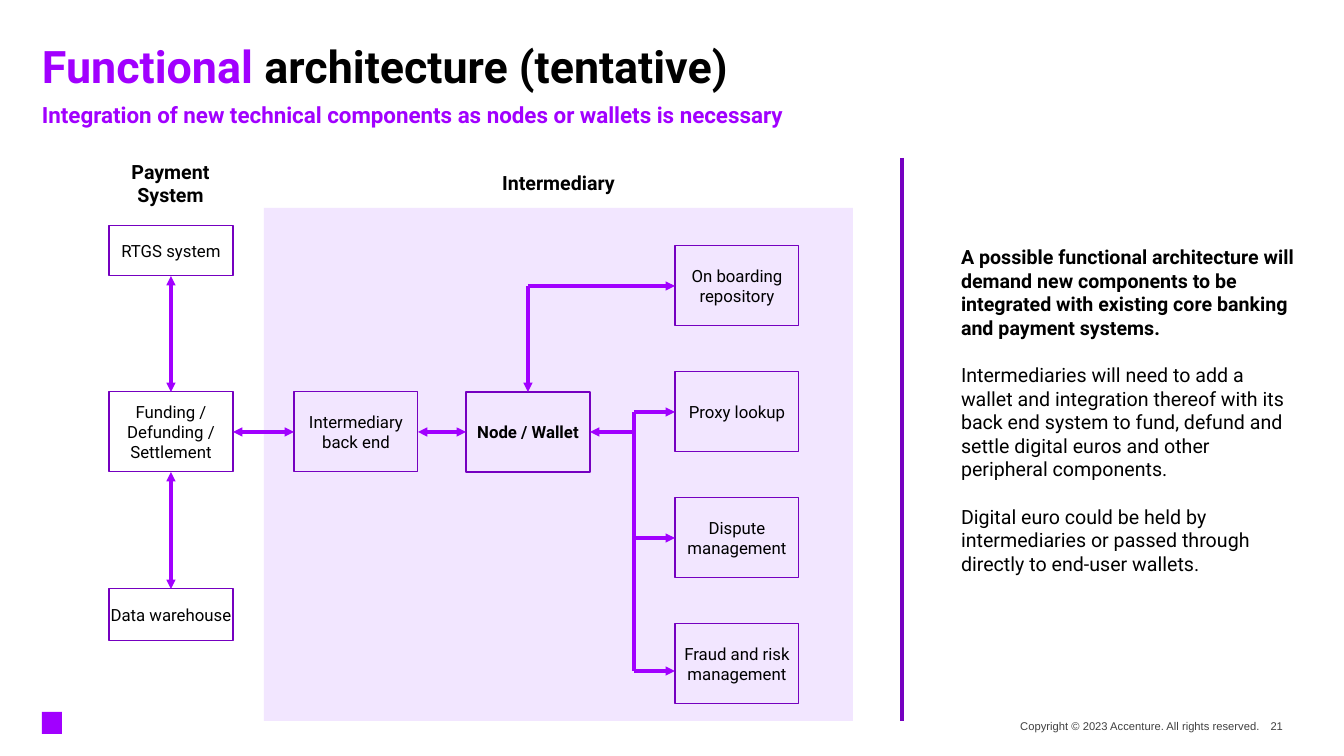
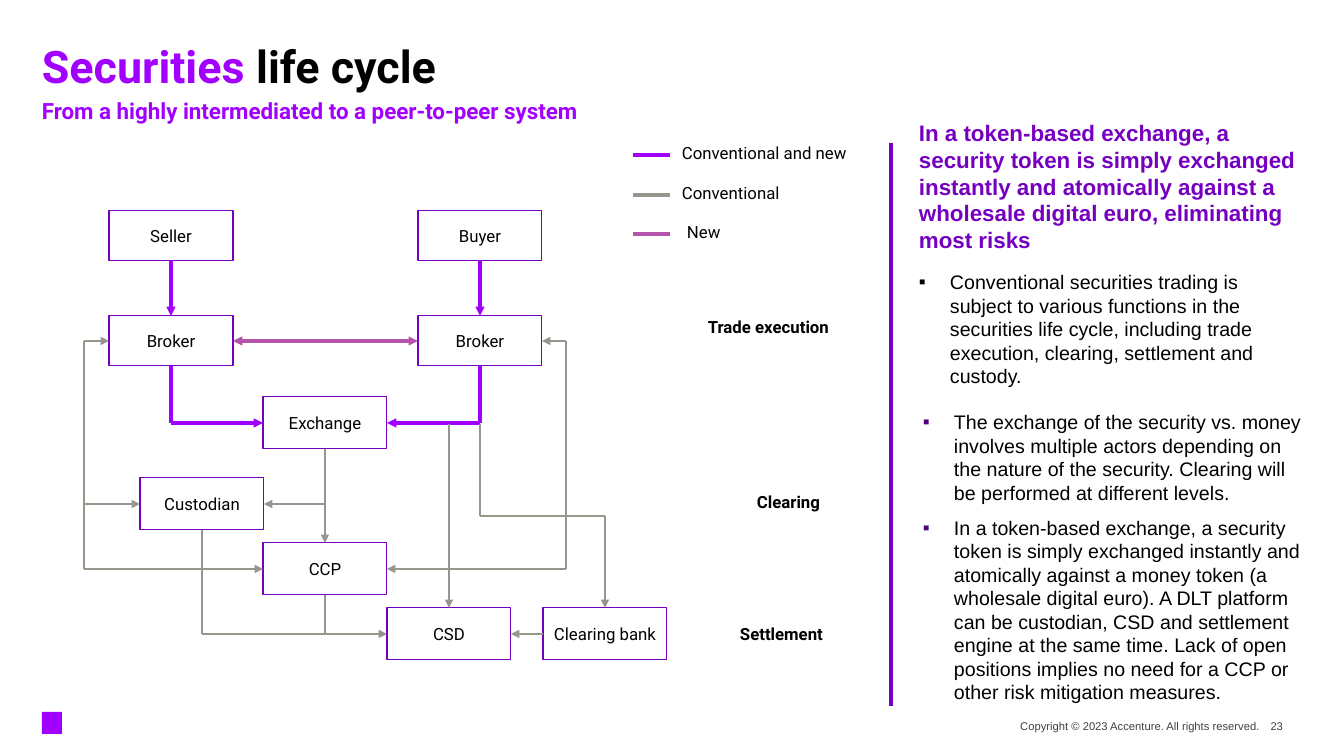
from lxml.etree import SubElement
from pptx import Presentation
from pptx.dml.color import RGBColor
from pptx.enum.shapes import MSO_CONNECTOR, MSO_SHAPE
from pptx.enum.text import MSO_ANCHOR, PP_ALIGN
from pptx.oxml.ns import qn
from pptx.util import Emu, Pt

PX = 914400 / 100.8
VIOLET = RGBColor(0xA1, 0x00, 0xFF)
DEEP_VIOLET = RGBColor(0x75, 0x00, 0xC0)
PLUM = RGBColor(0x50, 0x00, 0x80)
MAUVE = RGBColor(0xB4, 0x55, 0xAA)
LAVENDER = RGBColor(0xF2, 0xE6, 0xFF)
STONE = RGBColor(0x96, 0x96, 0x8C)
CHARCOAL = RGBColor(0x40, 0x40, 0x40)
BLACK = RGBColor(0, 0, 0)

TOP, LEFT, BOTTOM, RIGHT = range(4)
BOX_WIDTH = 124

TITLE = {"name": "Roboto", "size": Pt(32), "bold": True, "color": BLACK}
SUBTITLE = {"name": "Roboto", "size": Pt(16), "bold": True, "color": VIOLET}
LABEL = {"name": "Roboto", "size": Pt(12), "bold": False, "color": BLACK}
STRONG_LABEL = {**LABEL, "bold": True}
BODY = {**LABEL, "size": Pt(14)}
HEADING = {**BODY, "bold": True}
TOKEN_BODY = {**BODY, "name": "Arial"}
TOKEN_HEADING = {**SUBTITLE, "name": "Arial", "color": DEEP_VIOLET}
FOOTER = {"name": "Arial", "size": Pt(8), "bold": False, "color": CHARCOAL}

CENTRED = {"alignment": PP_ALIGN.CENTER}
RIGHTWARD = {"alignment": PP_ALIGN.RIGHT}
COPYRIGHT = "Copyright © 2023 Accenture. All rights reserved."

SERVICES = ["On boarding repository", "Proxy lookup",
            "Dispute management", "Fraud and risk management"]
ARCHITECTURE_BOXES = {
    "RTGS system": (109, 226, 50),
    "Funding / Defunding / Settlement": (109, 392, 80),
    "Data warehouse": (109, 589, 52),
    "Intermediary back end": (294, 392, 80),
    "Node / Wallet": (466, 392, 80),
    **{name: (675, 246 + 126 * row, 80) for row, name in enumerate(SERVICES)},
}
FUNDING = "Funding / Defunding / Settlement"
BACK_END = "Intermediary back end"
ARCHITECTURE_ROUTES = [
    ([("RTGS system", BOTTOM), (FUNDING, TOP)], VIOLET, "both"),
    ([(FUNDING, BOTTOM), ("Data warehouse", TOP)], VIOLET, "both"),
    ([(FUNDING, RIGHT), (BACK_END, LEFT)], VIOLET, "both"),
    ([(BACK_END, RIGHT), ("Node / Wallet", LEFT)], VIOLET, "both"),
    ([(634, 412), (634, 671)], VIOLET, "none"),
    ([(634, 432), ("Node / Wallet", RIGHT)], VIOLET, "end"),
    ([(634, 412), ("Proxy lookup", LEFT)], VIOLET, "end"),
    ([(634, 538), ("Dispute management", LEFT)], VIOLET, "end"),
    ([(634, 671), (675, 671)], VIOLET, "end"),
    ([("Node / Wallet", TOP), (528, 286), ("On boarding repository", LEFT)], VIOLET, "both"),
]
ARCHITECTURE_TEXT = [
    ("A possible functional architecture will demand new components to be integrated "
     "with existing core banking and payment systems.", HEADING),
    ("Intermediaries will need to add a wallet and integration thereof with its back end "
     "system to fund, defund and settle digital euros and other peripheral components.", BODY),
    ("Digital euro could be held by intermediaries or passed through directly to "
     "end-user wallets.", BODY),
]

SECURITIES_BOXES = {
    "Seller": (109, 211, 50),
    "Seller broker": (109, 316, 50),
    "Exchange": (263, 397, 52),
    "Buyer broker": (418, 316, 50),
    "Buyer": (418, 211, 50),
    "Custodian": (140, 478, 52),
    "CCP": (263, 543, 52),
    "CSD": (387, 608, 52),
    "Clearing bank": (543, 608, 52),
}
SECURITIES_CAPTIONS = {"Seller broker": "Broker", "Buyer broker": "Broker"}
SECURITIES_ROUTES = [
    ([("Seller broker", RIGHT), ("Buyer broker", LEFT)], MAUVE, "both"),
    ([("Seller", BOTTOM), ("Seller broker", TOP)], VIOLET, "end"),
    ([("Buyer", BOTTOM), ("Buyer broker", TOP)], VIOLET, "end"),
    ([("Seller broker", BOTTOM), (171, 423), ("Exchange", LEFT)], VIOLET, "end"),
    ([("Buyer broker", BOTTOM), (480, 423), ("Exchange", RIGHT)], VIOLET, "end"),
    ([("Exchange", BOTTOM), ("CCP", TOP)], STONE, "end"),
    ([(325, 504), ("Custodian", RIGHT)], STONE, "end"),
    ([("Custodian", BOTTOM), (202, 634), ("CSD", LEFT)], STONE, "end"),
    ([("CCP", BOTTOM), (325, 634)], STONE, "none"),
    ([(449, 424), ("CSD", TOP)], STONE, "end"),
    ([(480, 424), (480, 516), (605, 516), ("Clearing bank", TOP)], STONE, "end"),
    ([("CCP", RIGHT), (566, 569), (566, 341), ("Buyer broker", RIGHT)], STONE, "both"),
    ([("CCP", LEFT), (84, 569), (84, 341), ("Seller broker", LEFT)], STONE, "both"),
    ([(84, 504), ("Custodian", LEFT)], STONE, "end"),
    ([("Clearing bank", LEFT), ("CSD", RIGHT)], STONE, "end"),
]
LEGEND = [
    ("Conventional and new", VIOLET, 155, 682),
    ("Conventional", STONE, 195, 682),
    ("New", MAUVE, 234, 687),
]
STAGES = [("Trade execution", 829, 327), ("Clearing", 820, 502), ("Settlement", 823, 634)]
TOKEN_LEAD = ("In a token-based exchange, a security token is simply exchanged instantly and "
              "atomically against a wholesale digital euro, eliminating most risks")
TOKEN_BULLETS = [
    ("Conventional securities trading is subject to various functions in the securities "
     "life cycle, including trade execution, clearing, settlement and custody.",
     31, BLACK, {"space_after": Pt(12)}),
    ("The exchange of the security vs. money involves multiple actors depending on the "
     "nature of the security. Clearing will be performed at different levels.",
     35, PLUM, {"space_before": Pt(4), "space_after": Pt(4)}),
    ("In a token-based exchange, a security token is simply exchanged instantly and "
     "atomically against a money token (a wholesale digital euro). A DLT platform can be "
     "custodian, CSD and settlement engine at the same time. Lack of open positions implies "
     "no need for a CCP or other risk mitigation measures.",
     35, PLUM, {"space_before": Pt(4), "space_after": Pt(4)}),
]


def px(*lengths):
    return [Emu(round(length * PX)) for length in lengths]


def apply(target, values):
    for name, value in values.items():
        setattr(target, name, value)


def add_span(para, text, look):
    span = para.add_run()
    span.text = text
    apply(span.font, {name: value for name, value in look.items() if name != "color"})
    span.font.color.rgb = look["color"]


def prepare_frame(shape, anchor):
    frame = shape.text_frame
    apply(frame, {"word_wrap": True, "vertical_anchor": anchor, "margin_left": 0,
                  "margin_right": 0, "margin_top": 0, "margin_bottom": 0})
    return frame


def next_paragraph(frame):
    first = frame.paragraphs[0]
    return frame.add_paragraph() if first.runs else first


def add_text(page, area, paragraphs, anchor=MSO_ANCHOR.TOP):
    frame = prepare_frame(page.shapes.add_textbox(*px(*area)), anchor)
    for spans, layout in paragraphs:
        para = next_paragraph(frame)
        apply(para, layout)
        for text, look in spans:
            add_span(para, text, look)
    return frame


def add_label(page, area, text, look, layout):
    return add_text(page, area, [([(text, look)], layout)], MSO_ANCHOR.MIDDLE)


def add_bullet(frame, text, indent, colour, layout):
    para = next_paragraph(frame)
    apply(para, layout)
    properties = para._p.get_or_add_pPr()
    [indent_emu] = px(indent)
    [hanging] = px(31)
    properties.set("marL", str(indent_emu))
    properties.set("indent", str(-hanging))
    bullet_colour = SubElement(properties, qn("a:buClr"))
    SubElement(bullet_colour, qn("a:srgbClr")).set("val", str(colour))
    SubElement(properties, qn("a:buFont")).set("typeface", "Arial")
    SubElement(properties, qn("a:buChar")).set("char", "▪")
    add_span(para, text, TOKEN_BODY)


def add_panel(page, area, colour):
    panel = page.shapes.add_shape(MSO_SHAPE.RECTANGLE, *px(*area))
    panel.shadow.inherit = False
    panel.fill.solid()
    panel.fill.fore_color.rgb = colour
    panel.line.fill.background()


def add_box(page, area, text, emphasised):
    box = page.shapes.add_shape(MSO_SHAPE.RECTANGLE, *px(*area))
    box.shadow.inherit = False
    box.fill.background()
    box.line.color.rgb = DEEP_VIOLET
    box.line.width = Pt(1.5 if emphasised else 0.75)
    para = prepare_frame(box, MSO_ANCHOR.MIDDLE).paragraphs[0]
    apply(para, CENTRED)
    add_span(para, text, STRONG_LABEL if emphasised else LABEL)
    return box


def add_line(page, start, end, colour, width=2.25, head=False, tail=False):
    line = page.shapes.add_connector(MSO_CONNECTOR.STRAIGHT, *px(*start, *end))
    line.line.color.rgb = colour
    line.line.width = Pt(width)
    outline = line.line._get_or_add_ln()
    for wanted, tag in ((head, "a:headEnd"), (tail, "a:tailEnd")):
        if wanted:
            SubElement(outline, qn(tag)).set("type", "triangle")
    SubElement(line._element.spPr, qn("a:effectLst"))
    return line


def add_diagram(page, places, routes, captions, emphasised=None):
    boxes = {name: add_box(page, (left, top, BOX_WIDTH, height),
                           captions.get(name, name), name == emphasised)
             for name, (left, top, height) in places.items()}

    def locate(point):
        if point[0] not in places:
            return point
        name, side = point
        left, top, height = places[name]
        middle, centre = left + BOX_WIDTH // 2, top + height // 2
        return [(middle, top), (left, centre),
                (middle, top + height), (left + BOX_WIDTH, centre)][side]

    for points, colour, arrows in routes:
        last = len(points) - 2
        for index, (start, end) in enumerate(zip(points, points[1:])):
            line = add_line(page, locate(start), locate(end), colour,
                            1.5 if colour == STONE else 2.25,
                            head=index == 0 and arrows == "both",
                            tail=index == last and arrows != "none")
            if start[0] in boxes:
                line.begin_connect(boxes[start[0]], start[1])
            if end[0] in boxes:
                line.end_connect(boxes[end[0]], end[1])


def add_page(deck, number, accent, rest, subtitle, subtitle_top, subtitle_layout):
    page = deck.slides.add_slide(deck.slide_layouts[6])
    add_panel(page, (42, 712, 20, 22), VIOLET)
    add_text(page, (42, 49, 810, 65),
             [([(accent, {**TITLE, "color": VIOLET}), (rest, TITLE)], {"line_spacing": 0.8})])
    add_text(page, (42, subtitle_top, 1260, 55), [([(subtitle, SUBTITLE)], subtitle_layout)])
    add_label(page, (980, 715, 280, 23), COPYRIGHT, FOOTER, RIGHTWARD)
    add_label(page, (1263, 715, 20, 23), number, FOOTER, RIGHTWARD)
    return page


def build_architecture(deck):
    page = add_page(deck, "21", "Functional ", "architecture (tentative)",
                    "Integration of new technical components as nodes or wallets is necessary",
                    104, {"line_spacing": 0.9})
    add_panel(page, (264, 208, 589, 513), LAVENDER)
    add_text(page, (961, 245, 335, 360),
             [([span], {"space_after": Pt(17)}) for span in ARCHITECTURE_TEXT])
    add_line(page, (902, 158), (902, 721), DEEP_VIOLET)
    for heading, left in (("Payment System", 96), ("Intermediary", 484)):
        add_label(page, (left, 158, 149, 50), heading, HEADING, CENTRED)
    add_diagram(page, ARCHITECTURE_BOXES, ARCHITECTURE_ROUTES, {}, "Node / Wallet")


def build_securities(deck):
    page = add_page(deck, "23", "Securities ", "life cycle",
                    "From a highly intermediated to a peer-to-peer system", 97, {})
    frame = add_text(page, (919, 119, 383, 590),
                     [([(TOKEN_LEAD, TOKEN_HEADING)], {"space_after": Pt(12)})])
    for bullet in TOKEN_BULLETS:
        add_bullet(frame, *bullet)
    add_line(page, (891, 143), (891, 706), DEEP_VIOLET)
    add_diagram(page, SECURITIES_BOXES, SECURITIES_ROUTES, SECURITIES_CAPTIONS)
    for label, colour, middle, left in LEGEND:
        add_line(page, (633, middle), (670, middle), colour)
        add_label(page, (left, middle - 12, 195, 20), label, LABEL, {})
    for stage, right, middle in STAGES:
        add_label(page, (right - 146, middle - 12, 146, 24), stage, STRONG_LABEL, RIGHTWARD)


def main():
    deck = Presentation()
    deck.slide_width, deck.slide_height = px(1344, 756)
    build_architecture(deck)
    build_securities(deck)
    deck.save("out.pptx")


if __name__ == "__main__":
    main()
